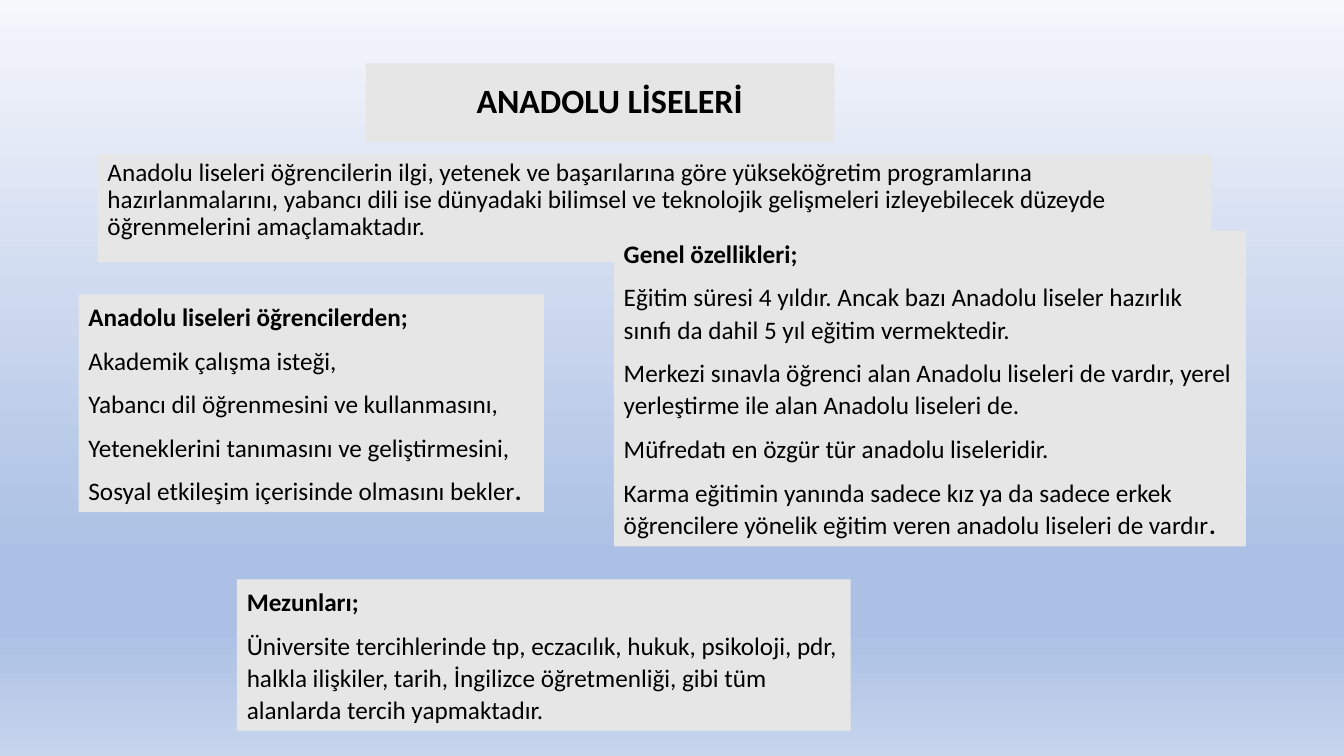
import pptx
import pptx.dml.color
import pptx.enum.text
import pptx.oxml
import pptx.oxml.ns
import pptx.util
from pptx.util import Cm, Pt

THEME = {
    "font": "Calibri",
    "ink": "000000",
    "panel": "E7E6E6",
    "title_size": 24.3,
    "body_size": 18,
    "background": [(0, "F6F8FC"), (7, "EFF2FA"), (74, "ABC0E4"),
                   (83, "ABC0E4"), (100, "C7D5ED")],
}

SLIDE_SIZE = (33.87, 19.05)
INSET = 0.25
TITLE_INDENT = 2.54

# Boxes are (left, top, width, height) in cm.
TITLE = {"box": (9.22, 1.6, 11.81, 1.98), "text": "ANADOLU LİSELERİ"}
INTRO = {
    "box": (2.46, 3.89, 28.07, 2.72),
    "text": "Anadolu liseleri öğrencilerin ilgi, yetenek ve başarılarına göre "
            "yükseköğretim programlarına hazırlanmalarını, yabancı dili ise "
            "dünyadaki bilimsel ve teknolojik gelişmeleri izleyebilecek düzeyde "
            "öğrenmelerini amaçlamaktadır.",
}
PANELS = [
    {
        "box": (1.98, 7.42, 11.73, 5.48),
        "heading": "Anadolu liseleri öğrencilerden;",
        "lines": [
            "Akademik çalışma isteği,",
            "Yabancı dil öğrenmesini ve kullanmasını,",
            "Yeteneklerini tanımasını ve geliştirmesini,",
            "Sosyal etkileşim içerisinde olmasını bekler",
        ],
        "bold_end": ".",
    },
    {
        "box": (15.47, 5.82, 15.93, 7.95),
        "heading": "Genel özellikleri;",
        "lines": [
            "Eğitim süresi 4 yıldır. Ancak bazı Anadolu liseler hazırlık sınıfı "
            "da dahil 5 yıl eğitim vermektedir.",
            "Merkezi sınavla öğrenci alan Anadolu liseleri de vardır, yerel "
            "yerleştirme ile alan Anadolu liseleri de.",
            "Müfredatı en özgür tür anadolu liseleridir.",
            "Karma eğitimin yanında sadece kız ya da sadece erkek öğrencilere "
            "yönelik eğitim veren anadolu liseleri de vardır",
        ],
        "bold_end": ".",
    },
    {
        "box": (5.97, 14.6, 15.47, 3.81),
        "heading": "Mezunları;",
        "lines": [
            "Üniversite tercihlerinde tıp, eczacılık, hukuk, psikoloji, pdr, "
            "halkla ilişkiler, tarih, İngilizce öğretmenliği, gibi tüm alanlarda "
            "tercih yapmaktadır.",
        ],
        "bold_end": "",
    },
]


def rgb(value):
    return pptx.dml.color.RGBColor.from_string(value)


def paint_background(s):
    """Fill the slide with the vertical theme gradient."""
    fill = s.background.fill
    fill.gradient()
    fill.gradient_angle = 270  # counter-clockwise: first stop at the top
    stops = next(s.background._cSld.iter(pptx.oxml.ns.qn("a:gsLst")))
    for stop in list(stops):
        stops.remove(stop)
    for percent, color in THEME["background"]:
        stops.append(pptx.oxml.parse_xml(
            f'<a:gs {pptx.oxml.ns.nsdecls("a")} pos="{percent * 1000}">'
            f'<a:srgbClr val="{color}"/></a:gs>'))


def add_panel(s, box, paragraphs, size, spacing, after=0, indent=0,
              anchor="TOP", fit="NONE"):
    """Add a filled text box; each paragraph is a list of (text, bold) runs."""
    sp = s.shapes.add_textbox(*map(Cm, box))
    sp.fill.solid()
    sp.fill.fore_color.rgb = rgb(THEME["panel"])
    tf = sp.text_frame
    tf.word_wrap = True
    tf.auto_size = getattr(pptx.enum.text.MSO_AUTO_SIZE, fit)
    tf.vertical_anchor = getattr(pptx.enum.text.MSO_ANCHOR, anchor)
    tf.margin_left = Cm(INSET + indent)
    for i, runs in enumerate(paragraphs):
        p = tf.add_paragraph() if i else tf.paragraphs[0]
        p.line_spacing = spacing
        p.space_after = Pt(after)
        for text, bold in runs:
            r = p.add_run()
            r.text = text
            r.font.name = THEME["font"]
            r.font.size = Pt(size)
            r.font.bold = bold
            r.font.color.rgb = rgb(THEME["ink"])


def panel_paragraphs(panel):
    paragraphs = [[(panel["heading"], True)]]
    paragraphs += [[(line, False)] for line in panel["lines"]]
    if panel["bold_end"]:
        paragraphs[-1].append((panel["bold_end"], True))
    return paragraphs


def main():
    prs = pptx.Presentation()
    prs.slide_width, prs.slide_height = map(Cm, SLIDE_SIZE)
    s = prs.slides.add_slide(prs.slide_layouts[6])
    paint_background(s)
    add_panel(s, TITLE["box"], [[(TITLE["text"], True)]], THEME["title_size"],
              0.9, indent=TITLE_INDENT, anchor="MIDDLE")
    add_panel(s, INTRO["box"], [[(INTRO["text"], False)]],
              THEME["body_size"], 0.9)
    for panel in PANELS:
        add_panel(s, panel["box"], panel_paragraphs(panel), THEME["body_size"],
                  1.07, after=8, fit="SHAPE_TO_FIT_TEXT")
    prs.save("out.pptx")


if __name__ == "__main__":
    main()
